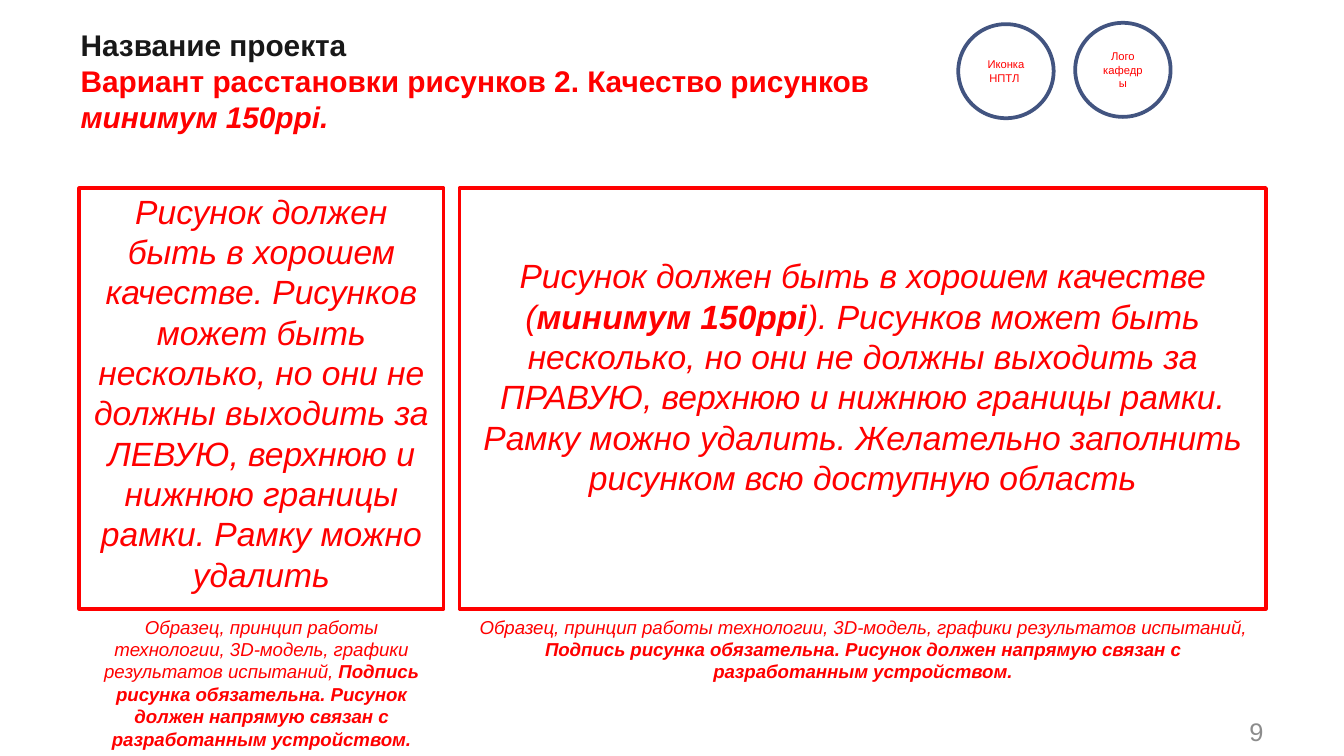
"""Build the project slide with two framed figure areas and their captions."""
import pptx
import pptx.dml.color
import pptx.enum.shapes
import pptx.enum.text
import pptx.util

Inches = pptx.util.Inches
Align = pptx.enum.text.PP_ALIGN
Anchor = pptx.enum.text.MSO_ANCHOR
Shape = pptx.enum.shapes.MSO_SHAPE

RED, DARK, GREY, NAVY, WHITE = "FF0000", "181818", "8C8C8C", "425480", "FFFFFF"
SLIDE_WIDTH, SLIDE_HEIGHT = 10, 10 * 9 / 16
FRAME_TOP, FRAME_HEIGHT = 1.4, 3.13
BADGE_WIDTH, BADGE_HEIGHT = 0.71, 0.7

TITLE = [[
    ("Название проекта\v", DARK, "b"),
    ("Вариант расстановки рисунков 2. Качество рисунков ", RED, "b"),
    ("минимум 150ppi.", RED, "bi"),
]]
CAPTION = [[
    ("Образец, принцип работы технологии, 3D-модель, графики результатов испытаний, ", RED, "i"),
    ("Подпись рисунка обязательна. Рисунок должен напрямую связан с "
     "разработанным устройством.", RED, "bi"),
]]
LEFT_NOTE = [[
    ("Рисунок должен быть в хорошем качестве. Рисунков может быть несколько, но они не "
     "должны выходить за ЛЕВУЮ, верхнюю и нижнюю границы рамки. Рамку можно удалить", RED, "i"),
]]
RIGHT_NOTE = [[
    ("Рисунок должен быть в хорошем качестве (", RED, "i"),
    ("минимум 150ppi", RED, "bi"),
    ("). Рисунков может быть несколько, но они не должны выходить за ПРАВУЮ, верхнюю и "
     "нижнюю границы рамки. Рамку можно удалить. Желательно заполнить рисунком всю "
     "доступную область", RED, "i"),
]]
LEFT_FRAME = (0.59, FRAME_TOP, 2.71, FRAME_HEIGHT)
RIGHT_FRAME = (3.42, FRAME_TOP, 6, FRAME_HEIGHT)
CAPTION_HEIGHTS = [(LEFT_FRAME, 1.11), (RIGHT_FRAME, 0.61)]
BADGES = [
    (8, 0.17, ["Лого", "кафедры"]),
    (7.13, 0.18, ["Иконка НПТЛ "]),
]


def color(value):
    return pptx.dml.color.RGBColor.from_string(value)


def write(box, paragraphs, size, align=Align.CENTER, anchor=Anchor.TOP):
    frame = box.text_frame
    frame.word_wrap = True
    frame.auto_size = pptx.enum.text.MSO_AUTO_SIZE.NONE
    frame.vertical_anchor = anchor
    frame.text = "\n" * (len(paragraphs) - 1)
    for para, spans in zip(frame.paragraphs, paragraphs):
        para.alignment = align
        para.line_spacing = 1.0
        for text, tint, style in spans:
            span = para.add_run()
            span.text = text.rstrip("\v")
            span.font.name = "Arial"
            span.font.size = pptx.util.Pt(size)
            span.font.bold = "b" in style
            span.font.italic = "i" in style
            span.font.color.rgb = color(tint)
            if text.endswith("\v"):
                para.add_line_break()


def add_outline(page, kind, place, line):
    shape = page.shapes.add_shape(kind, *map(Inches, place))
    shape.shadow.inherit = False
    shape.fill.solid()
    shape.fill.fore_color.rgb = color(WHITE)
    shape.line.color.rgb = color(line)
    shape.line.width = pptx.util.Pt(2)
    return shape


def add_text(page, place, paragraphs, size, align=Align.CENTER, anchor=Anchor.TOP):
    box = page.shapes.add_textbox(*map(Inches, place))
    write(box, paragraphs, size, align, anchor)


def main():
    deck = pptx.Presentation()
    deck.slide_width, deck.slide_height = Inches(SLIDE_WIDTH), Inches(SLIDE_HEIGHT)
    page = deck.slides.add_slide(deck.slide_layouts[5])

    title = page.shapes.title
    title.left, title.top, title.width, title.height = map(Inches, (0.5, 0.15, 6.47, 1.01))
    write(title, TITLE, 16, Align.LEFT)

    add_outline(page, Shape.RECTANGLE, LEFT_FRAME, RED)
    add_text(page, (0.59, 1.37, 2.71, FRAME_HEIGHT), LEFT_NOTE, 18)
    add_text(page, (8.94, 5.29, 0.56, 0.3), [[("9", GREY, "")]], 13.6, Align.RIGHT, Anchor.MIDDLE)

    for (left, top, width, height), caption_height in CAPTION_HEIGHTS:
        add_text(page, (left, top + height, width, caption_height), CAPTION, 10)

    right_frame = add_outline(page, Shape.RECTANGLE, RIGHT_FRAME, RED)
    right_frame.text_frame.margin_bottom = Inches(0.38)
    write(right_frame, RIGHT_NOTE, 18, anchor=Anchor.MIDDLE)

    for left, top, lines in BADGES:
        badge = add_outline(page, Shape.OVAL, (left, top, BADGE_WIDTH, BADGE_HEIGHT), NAVY)
        write(badge, [[(line, RED, "")] for line in lines], 6, anchor=Anchor.MIDDLE)

    deck.save("out.pptx")


if __name__ == "__main__":
    main()
